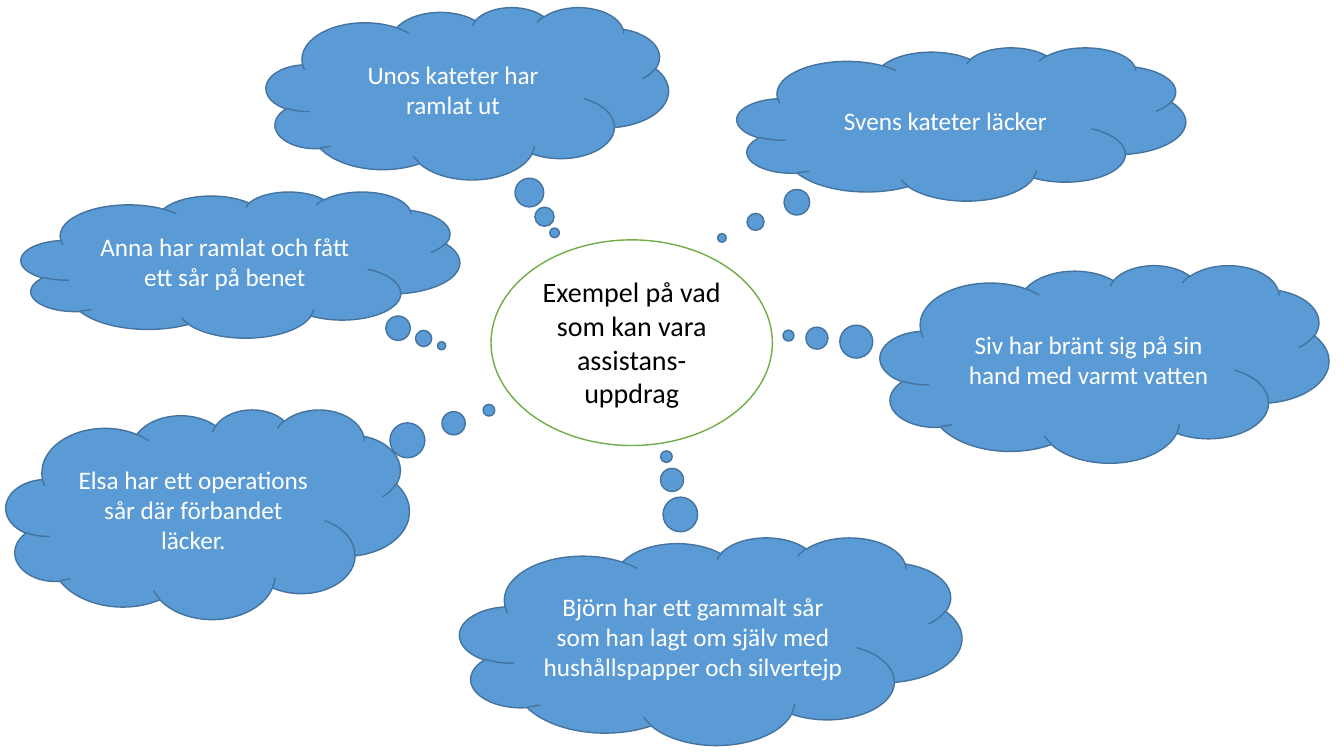
from pptx import Presentation
from pptx.dml.color import RGBColor
from pptx.enum.shapes import MSO_SHAPE
from pptx.enum.text import MSO_ANCHOR, MSO_AUTO_SIZE, PP_ALIGN
from pptx.util import Inches, Pt

WHITE = RGBColor(0xFF, 0xFF, 0xFF)
BLACK = RGBColor(0x00, 0x00, 0x00)
BLUE = RGBColor(0x5B, 0x9B, 0xD5)
DARK_BLUE = RGBColor(0x43, 0x73, 0x9E)
GREEN = RGBColor(0x70, 0xAD, 0x47)

# Text, (left, top, width, height), and the point the bubbles lead to, in grid cells
THOUGHTS_BEHIND = [
    ("Anna har ramlat och fått ett sår på benet", (2.1, 19, 43.5, 14.5), (43.8, 34.3)),
    ("Unos kateter har ramlat ut", (26.4, 0.7, 39.9, 17.1), (55, 23.1)),
    ("Elsa har ett operations sår där förbandet läcker.", (0.6, 40.6, 40, 20.8), (48.5, 40.7)),
    ("Siv har bränt sig på sin hand med varmt vatten", (87.3, 26.3, 44.5, 19.6), (78.2, 33.3)),
    ("Björn har ett gammalt sår som han lagt om själv med hushållspapper och silvertejp",
     (45.6, 53.3, 49.8, 20.6), (66.1, 45.3)),
]
THOUGHT_IN_FRONT = ("Svens kateter läcker", (73.1, 4.7, 44.5, 15.2), (71.6, 23.6))
TOPIC = ("Exempel på vad som kan vara assistans-uppdrag", (48.7, 23.8, 27.9, 20.4))


class ThoughtMap:
    """Draws on a page divided into square grid cells of a tenth of an inch."""

    font_name = "Calibri"
    cell = Inches(0.1)

    def __init__(self, page):
        self.page = page

    def shape(self, preset, area, fill, line):
        shape = self.page.shapes.add_shape(preset, *(round(n * self.cell) for n in area))
        shape.shadow.inherit = False
        shape.fill.solid()
        shape.fill.fore_color.rgb = fill
        shape.line.color.rgb = line
        shape.line.width = Pt(1)
        return shape

    def label(self, shape, text, size, color, anchor):
        frame = shape.text_frame
        frame.word_wrap = True
        frame.vertical_anchor = anchor
        para = frame.paragraphs[0]
        para.alignment = PP_ALIGN.CENTER
        span = para.add_run()
        span.text = text
        span.font.name = self.font_name
        span.font.size = Pt(size)
        span.font.color.rgb = color

    def thought(self, text, area, target):
        left, top, width, height = area
        cloud = self.shape(MSO_SHAPE.CLOUD_CALLOUT, area, BLUE, DARK_BLUE)
        # The callout measures its target from its centre, as shares of its size
        cloud.adjustments[0] = (target[0] - left) / width - 0.5
        cloud.adjustments[1] = (target[1] - top) / height - 0.5
        self.label(cloud, text, 18, WHITE, MSO_ANCHOR.MIDDLE)

    def topic(self, text, area):
        ellipse = self.shape(MSO_SHAPE.OVAL, area, WHITE, GREEN)
        self.label(ellipse, text, 20, BLACK, MSO_ANCHOR.TOP)
        ellipse.text_frame.auto_size = MSO_AUTO_SIZE.SHAPE_TO_FIT_TEXT


def main():
    deck = Presentation()
    deck.slide_width = Inches(13.33)
    deck.slide_height = Inches(7.5)
    blank_layout = deck.slide_layouts[6]
    thought_map = ThoughtMap(deck.slides.add_slide(blank_layout))
    for thought in THOUGHTS_BEHIND:
        thought_map.thought(*thought)
    thought_map.topic(*TOPIC)
    thought_map.thought(*THOUGHT_IN_FRONT)
    deck.save("out.pptx")


if __name__ == "__main__":
    main()
